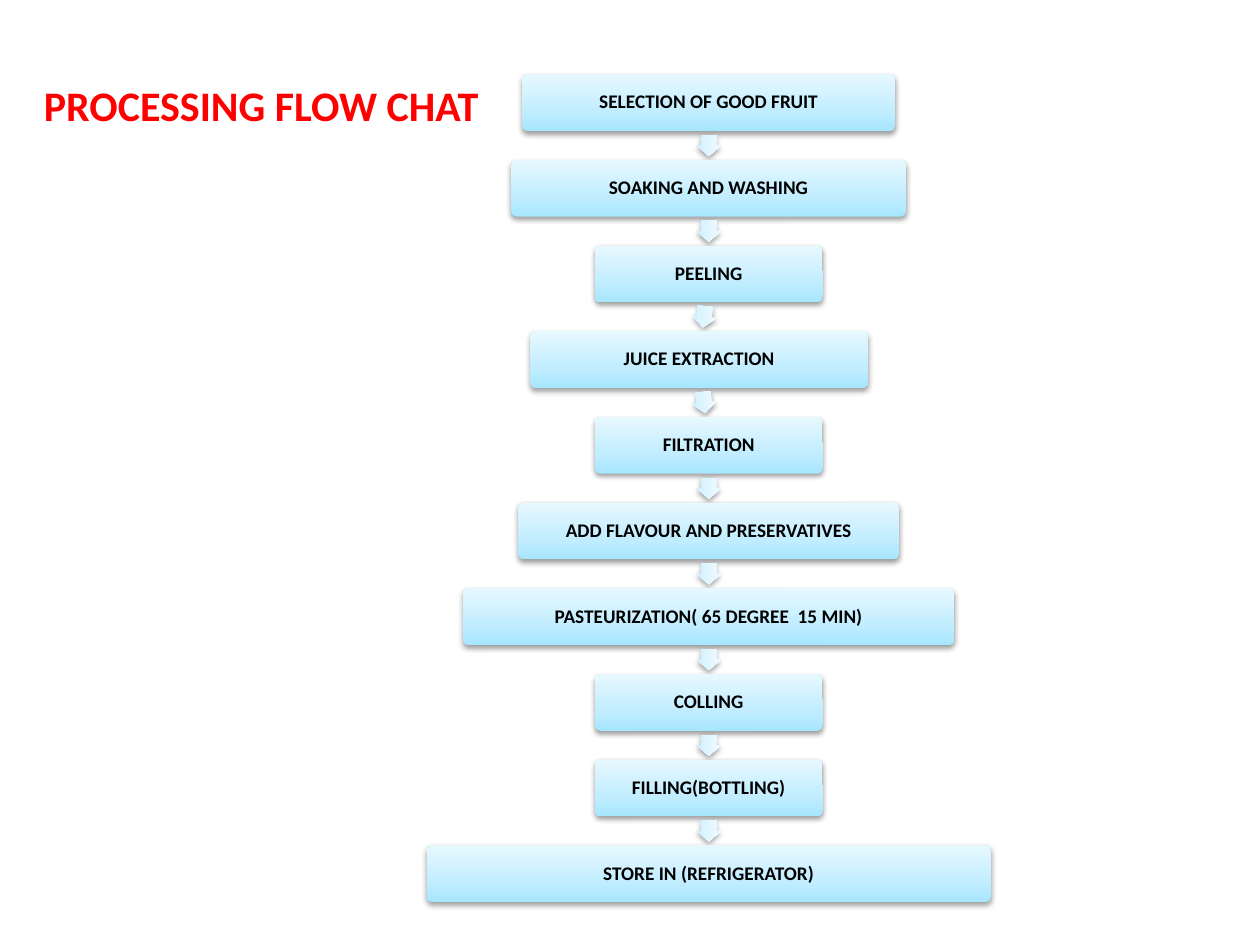
import copy
import math

import lxml.etree
import pptx
import pptx.dml.color
import pptx.enum.shapes
import pptx.enum.text
import pptx.oxml.ns
import pptx.util

Inches = pptx.util.Inches
Pt = pptx.util.Pt
qn = pptx.oxml.ns.qn

COLORS = {
    "title": "FF0000",
    "text": "000000",
    "shadow": "000000",
    "box_gradient": ["A7E6FF", "C1EDFF", "E7F8FF"],
    "arrow_gradient": ["CEF0FF", "DBF4FF", "F1FBFF"],
}
GRADIENT_POSITIONS = [0, 0.35, 1]
FONT = "Calibri"
CENTER = 5.625
TOP = 0.59
PITCH = 0.68
BOX_HEIGHT = 0.45
ARROW_LENGTH = 0.17
ARROW_WIDTH = 0.2

STEPS = [
    ("SELECTION OF GOOD FRUIT", 2.96, CENTER),
    ("SOAKING AND WASHING", 3.13, CENTER),
    ("PEELING", 1.81, CENTER),
    ("JUICE EXTRACTION", 2.68, 5.55),
    ("FILTRATION", 1.81, CENTER),
    ("ADD FLAVOUR AND PRESERVATIVES", 3.02, CENTER),
    ("PASTEURIZATION( 65 DEGREE  15 MIN)", 3.9, CENTER),
    ("COLLING", 1.81, CENTER),
    ("FILLING(BOTTLING)", 1.81, CENTER),
    ("STORE IN (REFRIGERATOR)", 4.48, CENTER),
]


def rgb(value):
    return pptx.dml.color.RGBColor.from_string(value)


def add_run(paragraph, text, size, color):
    run = paragraph.add_run()
    run.text = text
    run.font.name = FONT
    run.font.size = Pt(size)
    run.font.bold = True
    run.font.color.rgb = rgb(color)


def apply_gradient(shape, colors):
    fill = shape.fill
    fill.gradient()
    fill.gradient_angle = 90
    first_stop = shape._element.spPr.find(".//" + qn("a:gs"))
    first_stop.addnext(copy.deepcopy(first_stop))
    for stop, color, position in zip(fill.gradient_stops, colors, GRADIENT_POSITIONS):
        stop.color.rgb = rgb(color)
        stop.position = position


def apply_shadow(shape):
    shape.shadow.inherit = False
    effects = shape._element.spPr.find(qn("a:effectLst"))
    shadow = lxml.etree.SubElement(
        effects, qn("a:outerShdw"), blurRad="40000", dist="20000",
        dir="5400000", rotWithShape="0",
    )
    color = lxml.etree.SubElement(shadow, qn("a:srgbClr"), val=COLORS["shadow"])
    lxml.etree.SubElement(color, qn("a:alpha"), val="38000")


def add_flow_shape(slide, kind, center_x, center_y, width, height, colors):
    shape = slide.shapes.add_shape(
        kind, Inches(center_x - width / 2), Inches(center_y - height / 2),
        Inches(width), Inches(height),
    )
    apply_gradient(shape, colors)
    shape.line.fill.background()
    apply_shadow(shape)
    return shape


def add_step(slide, text, width, center_x, center_y):
    shape = add_flow_shape(
        slide, pptx.enum.shapes.MSO_SHAPE.ROUNDED_RECTANGLE,
        center_x, center_y, width, BOX_HEIGHT, COLORS["box_gradient"],
    )
    shape.adjustments[0] = 0.1
    frame = shape.text_frame
    frame.word_wrap = True
    frame.vertical_anchor = pptx.enum.text.MSO_ANCHOR.MIDDLE
    frame.margin_left = frame.margin_right = Inches(0.05)
    frame.margin_top = frame.margin_bottom = Inches(0.05)
    paragraph = frame.paragraphs[0]
    paragraph.alignment = pptx.enum.text.PP_ALIGN.CENTER
    paragraph.line_spacing = 0.9
    add_run(paragraph, text, 11, COLORS["text"])


def add_arrow(slide, start_x, end_x, center_y):
    arrow = add_flow_shape(
        slide, pptx.enum.shapes.MSO_SHAPE.RIGHT_ARROW,
        (start_x + end_x) / 2, center_y, ARROW_LENGTH, ARROW_WIDTH,
        COLORS["arrow_gradient"],
    )
    arrow.adjustments[0] = 0.6
    arrow.adjustments[1] = 0.5
    arrow.rotation = math.degrees(math.atan2(PITCH, end_x - start_x))


def add_title(slide, text):
    box = slide.shapes.add_textbox(Inches(0.25), Inches(0.58), Inches(5.17), Inches(0.5))
    box.text_frame.word_wrap = True
    add_run(box.text_frame.paragraphs[0], text, 24, COLORS["title"])


def main():
    presentation = pptx.Presentation()
    presentation.slide_width = Inches(10)
    presentation.slide_height = Inches(7.5)
    slide = presentation.slides.add_slide(presentation.slide_layouts[6])
    for index, (text, width, center_x) in enumerate(STEPS):
        center_y = TOP + BOX_HEIGHT / 2 + index * PITCH
        if index:
            add_arrow(slide, STEPS[index - 1][2], center_x, center_y - PITCH / 2)
        add_step(slide, text, width, center_x, center_y)
    add_title(slide, "PROCESSING FLOW CHAT")
    presentation.save("out.pptx")


if __name__ == "__main__":
    main()
